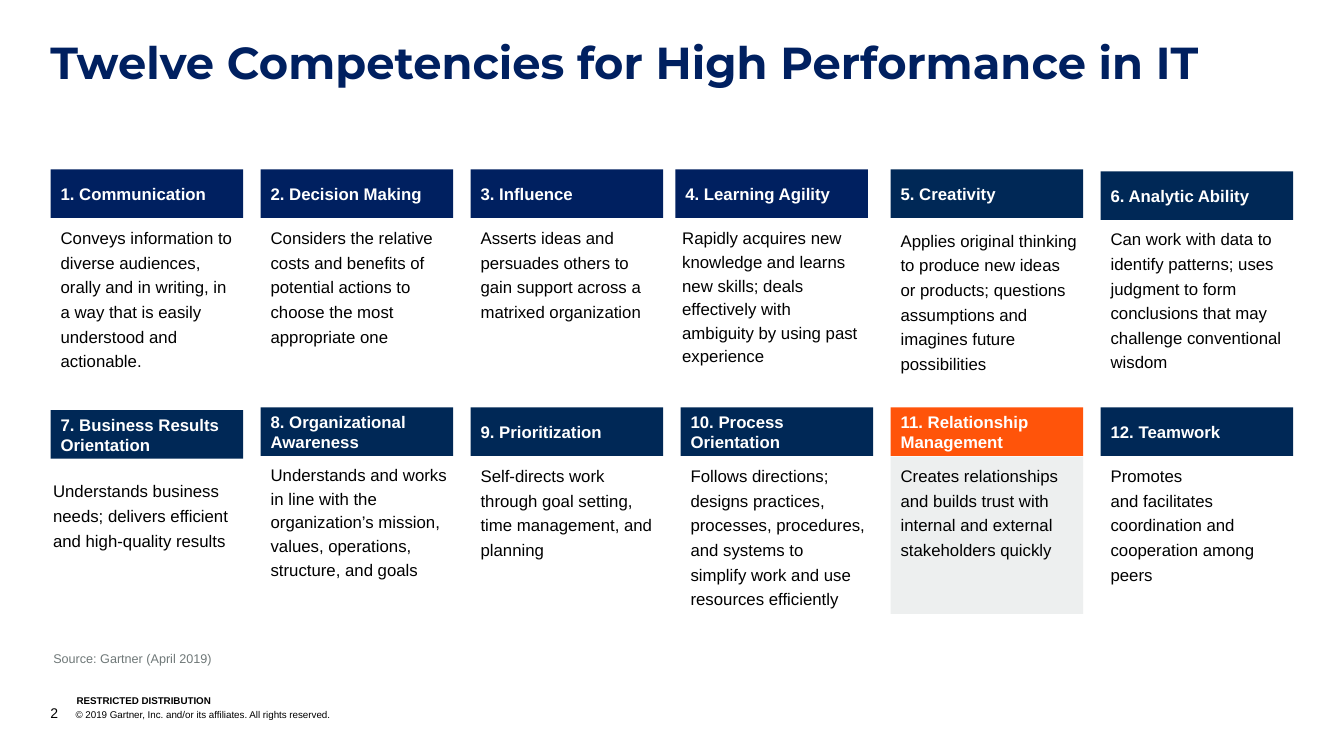
from copy import deepcopy
from dataclasses import dataclass

from lxml import etree
from pptx import Presentation
from pptx.dml.color import RGBColor
from pptx.enum import shapes, text as txt
from pptx.oxml import ns
from pptx.util import Pt

COLORS = {
    "title": "002060", "royal": "002060", "navy": "002856",
    "orange": "FF540A", "grey": "EDEFEF", "white": "FFFFFF",
    "black": "000000", "source": "6F7878",
}

COLUMNS = 6
LEFT, COLUMN_PITCH, CARD_WIDTH = 36.2, 150, 137.5
TOP, ROW_PITCH = 121, 170
HEAD_HEIGHT, BODY_OFFSET, BODY_HEIGHT = 34.6, 35.2, 112.3


@dataclass
class Competency:
    """Shifts are (right, down) offsets in points from the grid."""
    name: str
    detail: str
    head_fill: str = "navy"
    body_fill: str = None
    head_shift: tuple = (0, 0)
    body_shift: tuple = (0, 0)
    spacing: float = 1.22
    head_right_inset: float = 7.2


COMPETENCIES = [
    Competency("Communication",
               "Conveys information to diverse audiences, orally and in writing, "
               "in a way that is easily understood and actionable.",
               head_fill="royal"),
    Competency("Decision Making",
               "Considers the relative costs and benefits of potential actions "
               "to choose the most appropriate one",
               head_fill="royal"),
    Competency("Influence",
               "Asserts ideas and persuades others to gain support across a "
               "matrixed organization",
               head_fill="royal", body_fill="white"),
    Competency("Learning Agility",
               "Rapidly acquires new knowledge and learns new skills; deals "
               "effectively with ambiguity by using past experience",
               head_fill="royal", body_fill="white", spacing=1.17,
               head_shift=(-3.8, 0), body_shift=(-6, 0.8)),
    Competency("Creativity",
               "Applies original thinking to produce new ideas or products; "
               "questions assumptions and imagines future possibilities",
               body_fill="white", body_shift=(0, 1.8)),
    Competency("Analytic Ability",
               "Can work with data to identify patterns; uses judgment to form "
               "conclusions that may challenge conventional wisdom",
               head_shift=(0, 1.4), body_shift=(0, 0.8)),
    Competency("Business Results Orientation",
               "Understands business needs; delivers efficient and high-quality results",
               head_shift=(0, 2), body_shift=(-5.4, 10.8), head_right_inset=0),
    Competency("Organizational Awareness",
               "Understands and works in line with the organization’s mission, "
               "values, operations, structure, and goals",
               spacing=1.17, head_right_inset=0),
    Competency("Prioritization",
               "Self-directs work through goal setting, time management, and planning"),
    Competency("Process Orientation",
               "Follows directions; designs practices, processes, procedures, "
               "and systems to\nsimplify work and use resources efficiently"),
    Competency("Relationship Management",
               "Creates relationships and builds trust with internal and external "
               "stakeholders quickly",
               head_fill="orange", body_fill="grey"),
    Competency("Teamwork",
               "Promotes\nand facilitates coordination and cooperation among peers"),
]


def rgb(name):
    return RGBColor.from_string(COLORS[name])


def format_span(span, size, color, bold=False, font="Arial"):
    span.font.size = Pt(size)
    span.font.color.rgb = rgb(color)
    span.font.bold = bold
    span.font.name = font


def write(box, text, anchor="TOP", insets=(7.2, 3.6, 7.2, 3.6), spacing=None, **style):
    """Fill a box with one paragraph; insets run left, top, right, bottom."""
    frame = box.text_frame
    frame.word_wrap = True
    frame.vertical_anchor = txt.MSO_ANCHOR[anchor]
    (frame.margin_left, frame.margin_top,
     frame.margin_right, frame.margin_bottom) = map(Pt, insets)
    para = frame.paragraphs[0]
    para.alignment = txt.PP_ALIGN.LEFT
    para.line_spacing = spacing
    para.text = text
    for span in para.runs:
        format_span(span, **style)
    for line_break in para._p.findall(ns.qn("a:br")):
        line_break.append(deepcopy(para.runs[0]._r.rPr))
    return para


def add_text(page, left, top, width, height, text, **style):
    box = page.shapes.add_textbox(*map(Pt, (left, top, width, height)))
    return write(box, text, **style)


def add_panel(page, left, top, height, text, fill, **style):
    box = page.shapes.add_shape(shapes.MSO_SHAPE.RECTANGLE,
                                *map(Pt, (left, top, CARD_WIDTH, height)))
    box.shadow.inherit = False
    box.line.fill.background()
    box.fill.solid()
    box.fill.fore_color.rgb = rgb(fill)
    write(box, text, **style)


def add_card(page, index, item):
    row, column = divmod(index, COLUMNS)
    left, top = LEFT + column * COLUMN_PITCH, TOP + row * ROW_PITCH
    right, down = item.head_shift
    add_panel(page, left + right, top + down, HEAD_HEIGHT,
              f"{index + 1}. {item.name}", item.head_fill, anchor="MIDDLE",
              insets=(7.2, 3.6, item.head_right_inset, 3.6),
              size=12, color="white", bold=True)
    right, down = item.body_shift
    left, top = left + right, top + BODY_OFFSET + down
    style = dict(insets=(7.2, 3.6, 2.9, 3.6), spacing=item.spacing,
                 size=12, color="black")
    if item.body_fill:
        add_panel(page, left, top, BODY_HEIGHT, item.detail, item.body_fill, **style)
    else:
        add_text(page, left, top, CARD_WIDTH, BODY_HEIGHT, item.detail, **style)


def hang_after_tab(para, indent):
    properties = para._p.get_or_add_pPr()
    properties.set("marL", str(Pt(indent)))
    properties.set("indent", str(-Pt(indent)))
    tabs = etree.SubElement(properties, ns.qn("a:tabLst"))
    etree.SubElement(tabs, ns.qn("a:tab"), pos=str(Pt(indent)), algn="l")


def add_footer(page):
    flush = dict(anchor="BOTTOM", insets=(0, 0, 0, 0), color="black")
    number = add_text(page, 36, 503.3, 575, 12.2, "2", size=10, **flush)
    hang_after_tab(number, 18)
    notice = number.add_run()
    notice.text = "\t© 2019 Gartner, Inc. and/or its affiliates. All rights reserved."
    format_span(notice, 7, "black")
    add_text(page, 54.7, 496, 182, 8.6, "RESTRICTED DISTRIBUTION",
             size=7, bold=True, **flush)


def main():
    deck = Presentation()
    deck.slide_width, deck.slide_height = Pt(960), Pt(540)
    page = deck.slides.add_slide(deck.slide_layouts[6])
    add_footer(page)
    add_text(page, 36, 28.8, 888, 34.6, "Twelve Competencies for High Performance in IT",
             insets=(0, 0, 0, 0), spacing=0.9, size=32, color="title",
             bold=True, font="Montserrat")
    for index, item in enumerate(COMPETENCIES):
        add_card(page, index, item)
    add_text(page, 31, 461.5, 731, 18, "Source: Gartner (April 2019)",
             size=9, color="source")
    deck.save("out.pptx")


if __name__ == "__main__":
    main()
